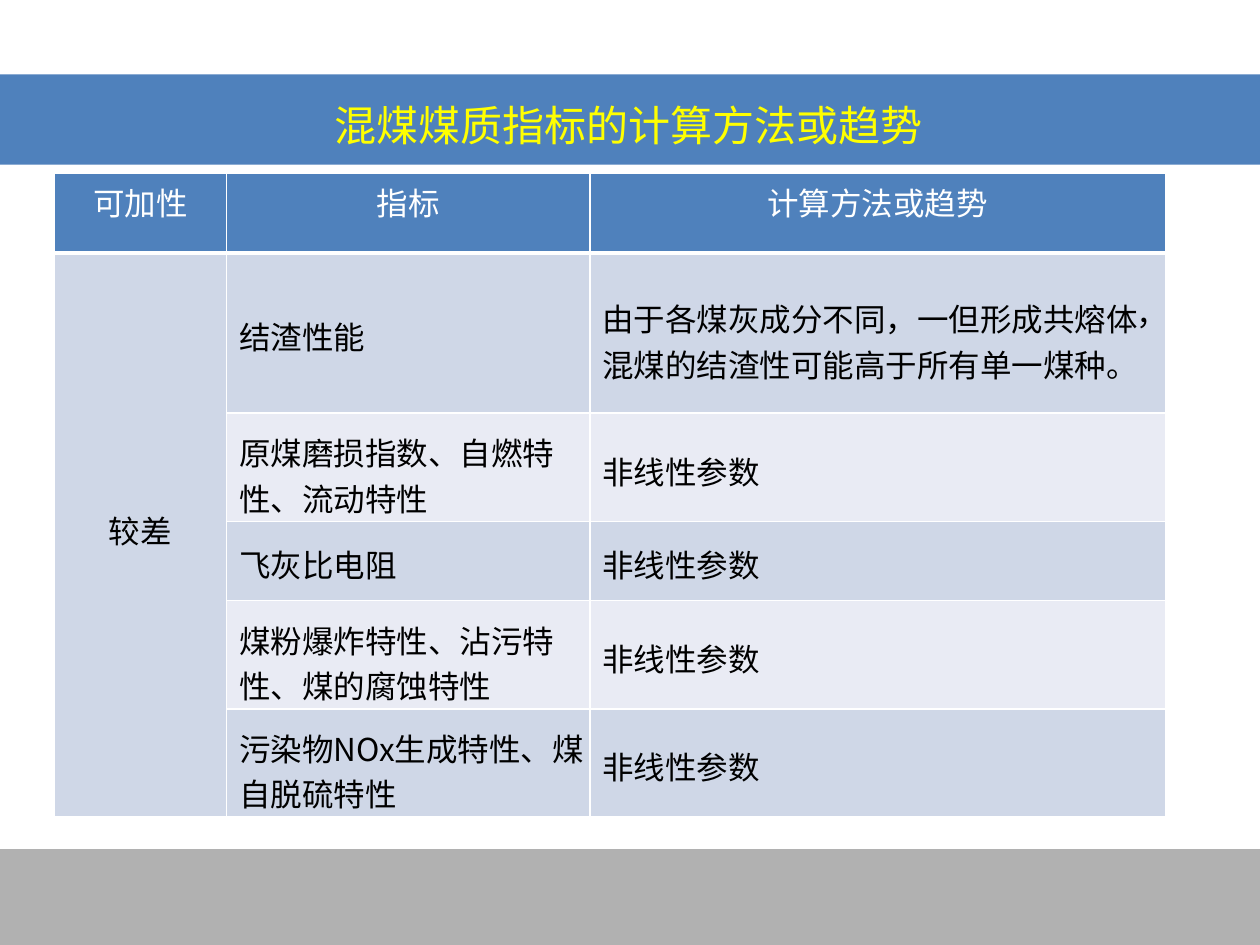
from lxml import etree
from pptx import Presentation
from pptx.dml.color import RGBColor
from pptx.enum import shapes, text
from pptx.oxml.ns import qn
from pptx.util import Cm, Pt

# Content
TITLE = "混煤煤质指标的计算方法或趋势"
HEADERS = ["可加性", "指标", "计算方法或趋势"]
ADDITIVITY = "较差"
NONLINEAR = "非线性参数"
INDICATORS = [  # indicator, method or trend
    ("结渣性能", "由于各煤灰成分不同，一但形成共熔体 混煤的结渣性可能高于所有单一煤种。"),
    ("原煤磨损指数、自燃特 性、流动特性", NONLINEAR),
    ("飞灰比电阻", NONLINEAR),
    ("煤粉爆炸特性、沾污特 性、煤的腐蚀特性", NONLINEAR),
    ("污染物NOx生成特性、煤 自脱硫特性", NONLINEAR),
]
COMMA = "，"

# Style
FONT = "Noto Sans CJK SC"
COLORS = {"band": "4F81BC", "footer": "B1B1B1", "title": "FFFF00", "white": "FFFFFF",
          "black": "000000", "odd": "CFD7E7", "even": "E9EBF4"}
COLUMNS = [3.48, 7.32, 11.6]
ROWS = [1.6, 3.23, 2.18, 1.6, 2.18, 2.18]
ONE_LINE = 12  # longest text that stays on one line
LEFT, CENTER = text.PP_ALIGN.LEFT, text.PP_ALIGN.CENTER
TOP, MIDDLE = text.MSO_ANCHOR.TOP, text.MSO_ANCHOR.MIDDLE


def rgb(name):
    return RGBColor.from_string(COLORS[name])


def write(frame, words, size, color, align=LEFT):
    frame.text = words
    paragraph = frame.paragraphs[0]
    paragraph.alignment = align
    font = paragraph.font
    font.size, font.bold, font.name = Pt(size), False, FONT
    font.color.rgb = rgb(color)
    defaults = paragraph._p.pPr.find(qn("a:defRPr"))
    etree.SubElement(defaults, qn("a:ea"), typeface=FONT)


def set_margins(item, left=0, top=0, bottom=0):
    item.margin_left, item.margin_top = Cm(left), Cm(top)
    item.margin_right, item.margin_bottom = Cm(0), Cm(bottom)


def set_borders(cell, top=1, bottom=1):
    properties = cell._tc.get_or_add_tcPr()
    for side, width in (("L", 1), ("R", 1), ("T", top), ("B", bottom)):
        line = etree.SubElement(properties, qn(f"a:ln{side}"), w=str(Pt(width)))
        fill = etree.SubElement(line, qn("a:solidFill"))
        etree.SubElement(fill, qn("a:srgbClr"), val=COLORS["white"])


def fill_cell(cell, words, fill, color="black", align=LEFT, anchor=MIDDLE, **margins):
    set_margins(cell, **margins)
    cell.vertical_anchor = anchor
    write(cell.text_frame, words, 18, color, align)
    cell.fill.solid()
    cell.fill.fore_color.rgb = rgb(fill)


def add_bar(slide, top, height, color):
    bar = slide.shapes.add_shape(shapes.MSO_SHAPE.RECTANGLE, 0, Cm(top), Cm(25.4), Cm(height))
    bar.shadow.inherit = False
    bar.fill.solid()
    bar.fill.fore_color.rgb = rgb(color)
    bar.line.fill.background()


def add_indicator_table(slide):
    table = slide.shapes.add_table(len(ROWS), len(COLUMNS), Cm(1.09), Cm(3.5),
                                   Cm(sum(COLUMNS)), Cm(sum(ROWS))).table
    for column, width in zip(table.columns, COLUMNS):
        column.width = Cm(width)
    for row, height in zip(table.rows, ROWS):
        row.height = Cm(height)
    for r in range(len(ROWS)):
        for c in range(len(COLUMNS)):
            set_borders(table.cell(r, c), top=3 if r == 1 else 1, bottom=3 if r == 0 else 1)

    for c, header in enumerate(HEADERS):
        fill_cell(table.cell(0, c), header, "band", "white", CENTER, TOP, top=0.1)

    table.cell(1, 0).merge(table.cell(len(INDICATORS), 0))
    fill_cell(table.cell(1, 0), ADDITIVITY, "odd", align=CENTER, bottom=0.2)
    for r, entry in enumerate(INDICATORS, 1):
        for c, words in enumerate(entry, 1):
            fill_cell(table.cell(r, c), words, "odd" if r % 2 else "even", left=0.25,
                      top=0.12 if len(words) <= ONE_LINE else 0.3)


def place_text(shape, box, words, size, color):
    shape.left, shape.top, shape.width, shape.height = map(Cm, box)
    frame = shape.text_frame
    frame.word_wrap = True
    frame.vertical_anchor = TOP
    set_margins(frame, top=0.03)
    write(frame, words, size, color)


def main():
    prs = Presentation()
    prs.slide_width, prs.slide_height = Cm(25.4), Cm(19.05)
    slide = prs.slides.add_slide(prs.slide_layouts[5])

    # Footer bar, table and the comma that hangs past its first row
    add_bar(slide, 17.12, 1.93, "footer")
    add_indicator_table(slide)
    comma = slide.shapes.add_textbox(0, 0, 0, 0)
    place_text(comma, (22.91, 5.89, 0.71, 0.84), COMMA, 18, "black")

    # Title in front of its band
    add_bar(slide, 1.5, 1.82, "band")
    title = slide.shapes.title
    place_text(title, (6.75, 1.98, 11.91, 1.09), TITLE, 24, "title")
    slide.shapes._spTree.append(title._element)

    prs.save("out.pptx")


if __name__ == "__main__":
    main()
